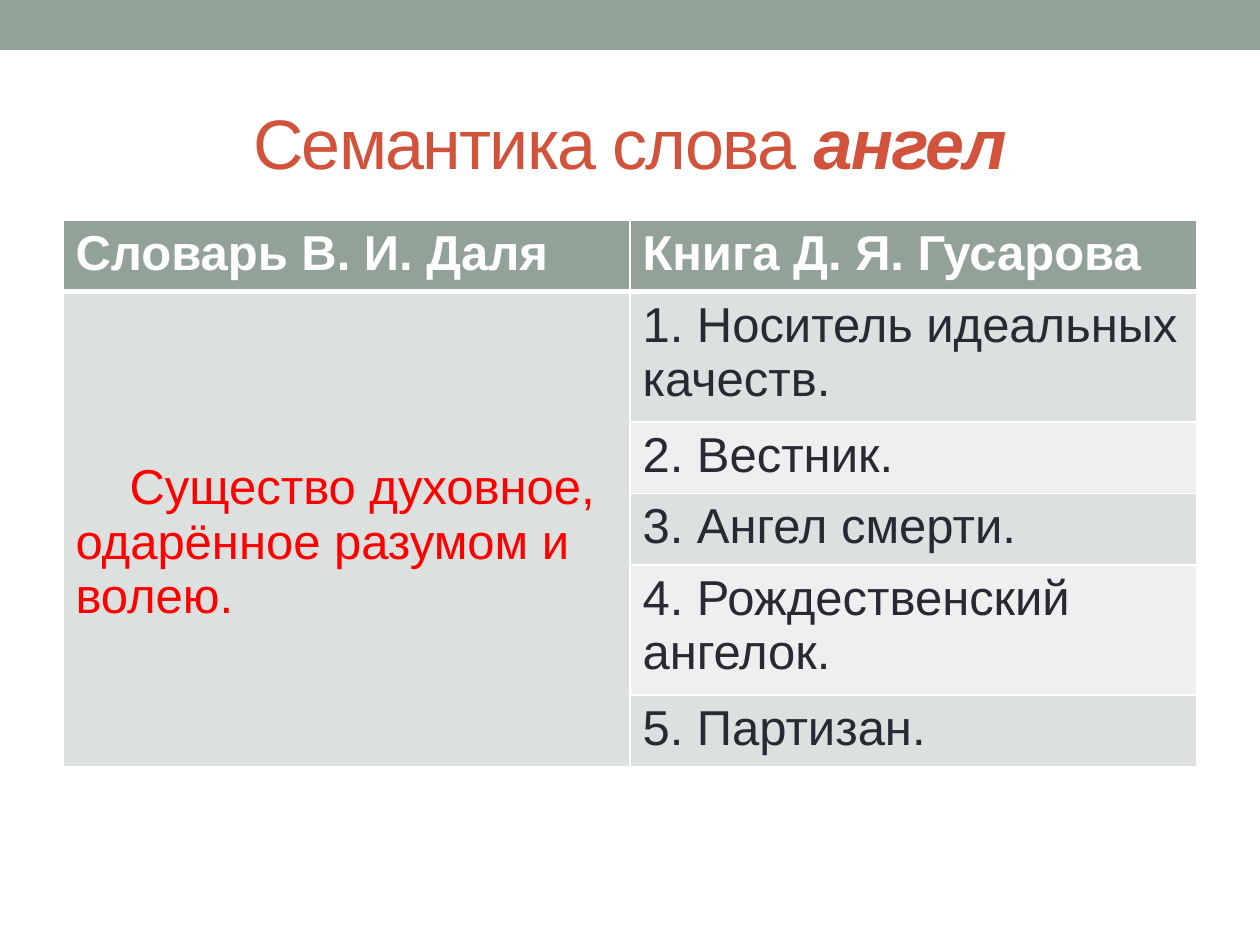
from dataclasses import dataclass

from lxml import etree
from pptx import Presentation
from pptx.dml.color import RGBColor
from pptx.enum.shapes import MSO_SHAPE
from pptx.enum.text import MSO_ANCHOR, PP_ALIGN
from pptx.oxml.ns import qn
from pptx.util import Emu, Pt

RECTANGLE = MSO_SHAPE.RECTANGLE
MIDDLE = MSO_ANCHOR.MIDDLE
CENTER = PP_ALIGN.CENTER

EMU_PER_PX = 914400 / 126
FONT = "Arial"
SAGE, BAND_DARK, BAND_LIGHT = "93A299", "DCE0DE", "EEF0EF"
WHITE, INK, RED, RUST = "FFFFFF", "292934", "FF0000", "D2533C"
LEFT, WIDTH = 63, 1134
ONE_LINE, TWO_LINES = 67, 122


@dataclass
class Style:
    size: int
    color: str
    bold: bool = False
    italic: bool = False
    tracking: int = 0


@dataclass
class Meaning:
    text: str
    height: int


HEADER = Style(28, WHITE, bold=True)
BODY = Style(28, INK)
DEFINITION = Style(28, RED)
TITLE = Style(40, RUST, tracking=-100)
TITLE_WORD = Style(40, RUST, bold=True, italic=True, tracking=-100)

HEADINGS = ["Словарь В. И. Даля", "Книга Д. Я. Гусарова"]
MEANINGS = [
    Meaning("1. Носитель идеальных качеств.", TWO_LINES),
    Meaning("2. Вестник.", ONE_LINE),
    Meaning("3. Ангел смерти.", ONE_LINE),
    Meaning("4. Рождественский ангелок.", TWO_LINES),
    Meaning("5. Партизан.", ONE_LINE),
]


def px(length: int) -> Emu:
    return Emu(round(length * EMU_PER_PX))


def rgb(color: str) -> RGBColor:
    return RGBColor.from_string(color)


def add_run(para, text: str, style: Style) -> None:
    span = para.add_run()
    span.text = text
    font = span.font
    font.name, font.size = FONT, Pt(style.size)
    font.bold, font.italic = style.bold, style.italic
    font.color.rgb = rgb(style.color)
    if style.tracking:
        span.font._element.set("spc", str(style.tracking))


def set_borders(cell, top: int = 1, bottom: int = 1) -> None:
    properties = cell._tc.get_or_add_tcPr()
    for side, width in (("L", 1), ("R", 1), ("T", top), ("B", bottom)):
        line = etree.SubElement(properties, qn(f"a:ln{side}"), w=str(Pt(width)))
        fill = etree.SubElement(line, qn("a:solidFill"))
        etree.SubElement(fill, qn("a:srgbClr"), val=WHITE)


def fill_cell(cell, color: str, top: int = 1, bottom: int = 1) -> None:
    set_borders(cell, top, bottom)
    cell.fill.solid()
    cell.fill.fore_color.rgb = rgb(color)


def add_bar(page) -> None:
    bar = page.shapes.add_shape(RECTANGLE, 0, 0, px(1260), px(50))
    bar.shadow.inherit = False
    bar.fill.solid()
    bar.fill.fore_color.rgb = rgb(SAGE)
    bar.line.fill.background()


def add_title(page) -> None:
    box = page.shapes.add_textbox(px(LEFT), px(73), px(WIDTH), px(136))
    frame = box.text_frame
    frame.word_wrap = True
    frame.vertical_anchor = MIDDLE
    para = frame.paragraphs[0]
    para.alignment = CENTER
    add_run(para, "Семантика слова ", TITLE)
    add_run(para, "ангел", TITLE_WORD)


def add_meanings_table(page) -> None:
    heights = [ONE_LINE] + [meaning.height for meaning in MEANINGS]
    table = page.shapes.add_table(
        len(heights), 2, px(LEFT), px(220), px(WIDTH), px(sum(heights))
    ).table
    for row, height in zip(table.rows, heights):
        row.height = px(height)

    # Header row
    for column, heading in enumerate(HEADINGS):
        cell = table.cell(0, column)
        fill_cell(cell, SAGE, bottom=3)
        add_run(cell.text_frame.paragraphs[0], heading, HEADER)

    # Banded body rows
    for index, meaning in enumerate(MEANINGS, start=1):
        top = 3 if index == 1 else 1
        fill_cell(table.cell(index, 0), BAND_DARK, top)
        cell = table.cell(index, 1)
        fill_cell(cell, BAND_DARK if index % 2 else BAND_LIGHT, top)
        add_run(cell.text_frame.paragraphs[0], meaning.text, BODY)

    # Dictionary definition spanning all body rows
    definition = table.cell(1, 0)
    definition.merge(table.cell(len(MEANINGS), 0))
    definition.margin_top = px(169)
    para = definition.text_frame.paragraphs[0]
    para._p.get_or_add_pPr().set("indent", str(px(54)))
    add_run(para, "Существо духовное, одарённое разумом и волею.", DEFINITION)


def main() -> None:
    deck = Presentation()
    deck.slide_width, deck.slide_height = px(1260), px(945)
    page = deck.slides.add_slide(deck.slide_layouts[6])
    add_bar(page)
    add_title(page)
    add_meanings_table(page)
    deck.save("out.pptx")


if __name__ == "__main__":
    main()
